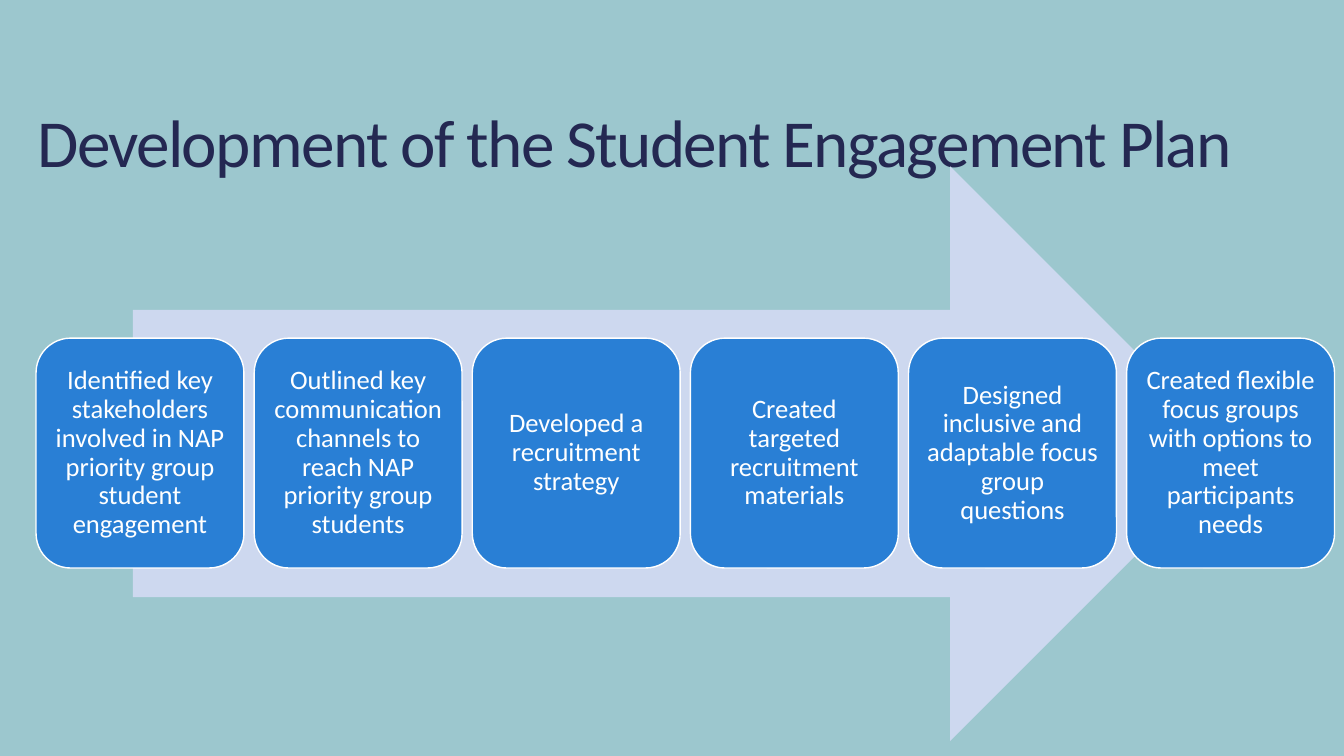
from dataclasses import dataclass

from pptx import Presentation
from pptx.dml.color import RGBColor
from pptx.enum.shapes import MSO_SHAPE
from pptx.enum.text import MSO_ANCHOR, MSO_AUTO_SIZE, PP_ALIGN
from pptx.shapes.autoshape import Shape
from pptx.slide import Slide
from pptx.util import Pt

BACKGROUND = RGBColor(0x9C, 0xC7, 0xCE)
NAVY = RGBColor(0x24, 0x28, 0x52)
PALE_BLUE = RGBColor(0xCD, 0xD8, 0xEF)
BLUE = RGBColor(0x29, 0x7F, 0xD5)
WHITE = RGBColor(0xFF, 0xFF, 0xFF)
FONT = "Calibri"

STEP_LEFT, STEP_TOP = 25.75, 241.5
STEP_WIDTH, STEP_HEIGHT = 148.5, 164.2
STEP_PITCH = 155.8
STEP_INSET = Pt(5.7)


@dataclass
class Step:
    position: int
    text: str


STEPS = [
    Step(position, text)
    for position, text in enumerate([
        "Identified key stakeholders involved in NAP priority group student engagement",
        "Outlined key communication channels to reach NAP priority group students",
        "Developed a recruitment strategy",
        "Created targeted recruitment materials",
        "Designed inclusive and adaptable focus group questions",
        "Created flexible focus groups with options to meet participants needs",
    ])
]


def format_text(shape: Shape, text: str, size: float, color: RGBColor,
                alignment: PP_ALIGN, line_spacing: float) -> None:
    frame = shape.text_frame
    frame.text = text
    frame.word_wrap = True
    frame.auto_size = MSO_AUTO_SIZE.NONE
    frame.vertical_anchor = MSO_ANCHOR.MIDDLE
    paragraph = frame.paragraphs[0]
    paragraph.alignment = alignment
    paragraph.line_spacing = line_spacing
    paragraph.space_before = Pt(0)
    font = paragraph.runs[0].font
    font.name = FONT
    font.size = Pt(size)
    font.color.rgb = color


def add_title(slide: Slide, text: str) -> None:
    title = slide.shapes.title
    title.left, title.top = Pt(19.5), Pt(39.6)
    title.width, title.height = Pt(915), Pt(130.3)
    format_text(title, text, 48, NAVY, PP_ALIGN.LEFT, 0.85)
    # Letter spacing in hundredths of a point
    title.text_frame.paragraphs[0].runs[0].font._element.set("spc", "-120")


def add_arrow(slide: Slide) -> None:
    arrow = slide.shapes.add_shape(
        MSO_SHAPE.RIGHT_ARROW, Pt(95), Pt(118.8), Pt(789), Pt(410.4))
    arrow.shadow.inherit = False
    arrow.fill.solid()
    arrow.fill.fore_color.rgb = PALE_BLUE
    arrow.line.fill.background()


def add_step(slide: Slide, step: Step) -> None:
    box = slide.shapes.add_shape(
        MSO_SHAPE.ROUNDED_RECTANGLE,
        Pt(STEP_LEFT + step.position * STEP_PITCH), Pt(STEP_TOP),
        Pt(STEP_WIDTH), Pt(STEP_HEIGHT))
    box.shadow.inherit = False
    box.fill.solid()
    box.fill.fore_color.rgb = BLUE
    box.line.color.rgb = WHITE
    box.line.width = Pt(1)
    frame = box.text_frame
    frame.margin_left = frame.margin_right = STEP_INSET
    frame.margin_top = frame.margin_bottom = STEP_INSET
    format_text(box, step.text, 19, WHITE, PP_ALIGN.CENTER, 0.9)


def main() -> None:
    presentation = Presentation()
    presentation.slide_width, presentation.slide_height = Pt(960), Pt(540)

    # Title-only slide with a plain background
    slide = presentation.slides.add_slide(presentation.slide_layouts[5])
    slide.background.fill.solid()
    slide.background.fill.fore_color.rgb = BACKGROUND
    add_title(slide, "Development of the Student Engagement Plan")

    # Process arrow with its steps in front
    add_arrow(slide)
    for step in STEPS:
        add_step(slide, step)

    presentation.save("out.pptx")


if __name__ == "__main__":
    main()
